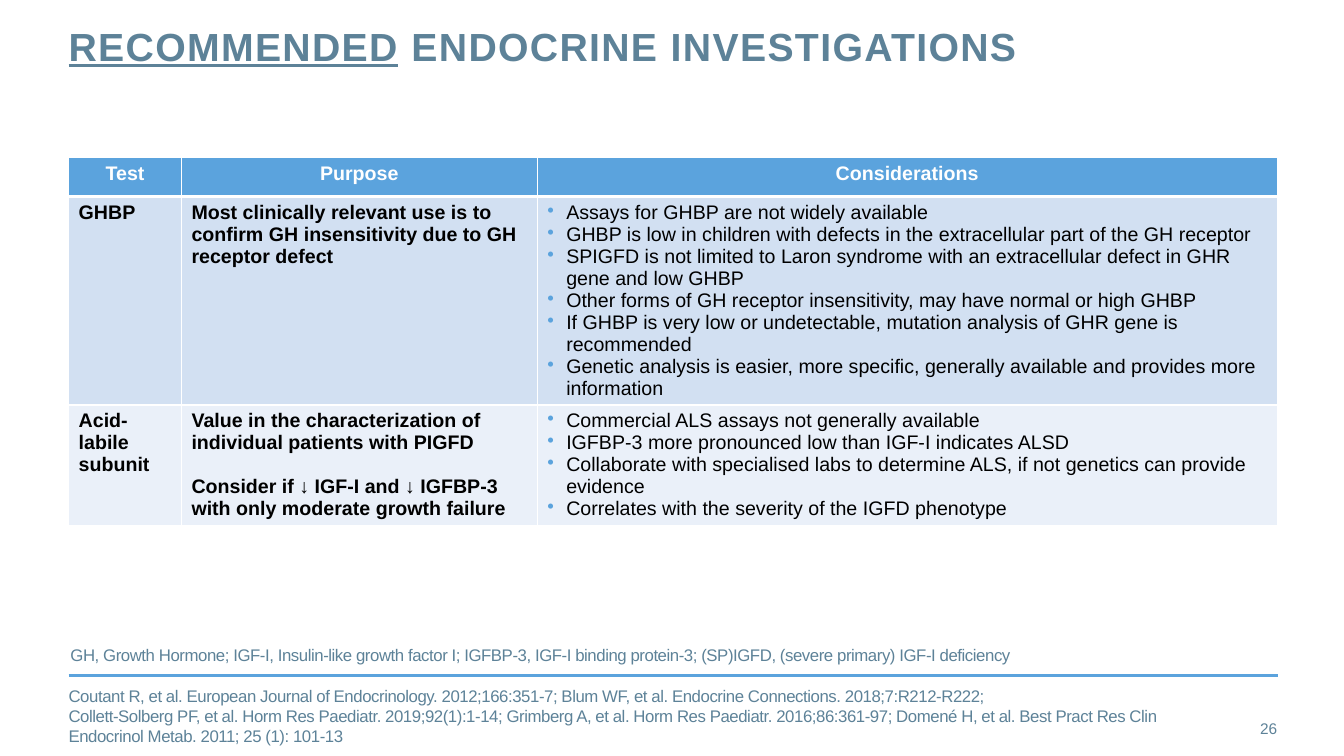
import pptx
import pptx.util
import pptx.dml.color
import pptx.enum.text
import pptx.enum.shapes
import pptx.oxml
import pptx.oxml.ns

Pt = pptx.util.Pt
ALIGN = pptx.enum.text.PP_ALIGN
ANCHOR = pptx.enum.text.MSO_ANCHOR

THEME = {
    "font": "Arial", "slate": "5D8298", "blue": "5BA3DD", "white": "FFFFFF",
    "black": "000000", "bands": ["D2E0F2", "EAF0F9"],
    "title": 28, "cell": 14, "note": 12, "page": 11,
}

TITLE = [("RECOMMENDED", True), (" ENDOCRINE INVESTIGATIONS", False)]
HEADS = ["Test", "Purpose", "Considerations"]
TESTS = [
    (["GHBP"],
     ["Most clinically relevant use is to confirm GH insensitivity due to GH receptor defect"],
     ["Assays for GHBP are not widely available",
      "GHBP is low in children with defects in the extracellular part of the GH receptor",
      "SPIGFD is not limited to Laron syndrome with an extracellular defect in GHR gene and low GHBP",
      "Other forms of GH receptor insensitivity, may have normal or high GHBP",
      "If GHBP is very low or undetectable, mutation analysis of GHR gene is recommended",
      "Genetic analysis is easier, more specific, generally available and provides more information"]),
    (["Acid-labile subunit"],
     ["Value in the characterization of individual patients with PIGFD",
      "Consider if ↓ IGF-I and ↓ IGFBP-3 with only moderate growth failure"],
     ["Commercial ALS assays not generally available",
      "IGFBP-3 more pronounced low than IGF-I indicates ALSD",
      "Collaborate with specialised labs to determine ALS, if not genetics can provide evidence",
      "Correlates with the severity of the IGFD phenotype"]),
]
TERMS = ("GH, Growth Hormone; IGF-I, Insulin-like growth factor I; IGFBP-3, IGF-I binding "
         "protein-3; (SP)IGFD, (severe primary) IGF-I deficiency")
REFS = ("Coutant R, et al. European Journal of Endocrinology. 2012;166:351-7; "
        "Blum WF, et al. Endocrine Connections. 2018;7:R212-R222;\n"
        "Collett-Solberg PF, et al. Horm Res Paediatr. 2019;92(1):1-14; "
        "Grimberg A, et al. Horm Res Paediatr. 2016;86:361-97; "
        "Domené H, et al. Best Pract Res Clin Endocrinol Metab. 2011; 25 (1): 101-13")
PAGE = "26"

LEFT, RULE = 49, 482.4
WIDE = 864
COLS = [80.6, 254.2, 528.5]
ROWS = [28.1, 148.5, 85.7]
GAP = 15.8


def tint(name):
    return pptx.dml.color.RGBColor.from_string(name)


def add_mark(para):
    props = para._p.get_or_add_pPr()
    props.set("marL", str(Pt(13.5)))
    props.set("indent", str(-Pt(13.5)))
    space = pptx.oxml.ns.nsdecls("a")
    for xml in (f'<a:buClr {space}><a:srgbClr val="{THEME["blue"]}"/></a:buClr>',
                f'<a:buChar {space} char="•"/>'):
        props.append(pptx.oxml.parse_xml(xml))


def write(frame, paras, size, color, bold=False, align=None, spread=0,
          mark=False, gap=0, lead=None):
    for num, runs in enumerate(paras):
        para = frame.paragraphs[0] if num == 0 else frame.add_paragraph()
        if mark:
            add_mark(para)
        if align is not None:
            para.alignment = align
        if num and gap:
            para.space_before = Pt(gap)
        if lead:
            para.line_spacing = Pt(lead)
        for text, under in ([(runs, False)] if isinstance(runs, str) else runs):
            for order, line in enumerate(text.split("\n")):
                if order:
                    para.add_line_break()
                run = para.add_run()
                run.text = line
                font = run.font
                font.name, font.size, font.bold = THEME["font"], Pt(size), bold
                font.underline = under
                font.color.rgb = tint(color)
                if spread:
                    run._r.get_or_add_rPr().set("spc", str(round(spread * 100)))


def add_box(slide, left, top, width, height, paras, inset=(0, 0), anchor=ANCHOR.TOP, **form):
    box = slide.shapes.add_textbox(Pt(left), Pt(top), Pt(width), Pt(height))
    frame = box.text_frame
    frame.word_wrap = True
    frame.vertical_anchor = anchor
    frame.margin_left = frame.margin_right = Pt(inset[0])
    frame.margin_top = frame.margin_bottom = Pt(inset[1])
    write(frame, paras, **form)


def style_cell(cell, fill, top, base):
    props = cell._tc.get_or_add_tcPr()
    for side, width in (("L", 1), ("R", 1), ("T", top), ("B", base)):
        props.append(pptx.oxml.parse_xml(
            f'<a:ln{side} {pptx.oxml.ns.nsdecls("a")} w="{Pt(width)}"><a:solidFill>'
            f'<a:srgbClr val="{THEME["white"]}"/></a:solidFill></a:ln{side}>'))
    cell.fill.solid()
    cell.fill.fore_color.rgb = tint(fill)


def add_tests(slide):
    table = slide.shapes.add_table(
        len(ROWS), len(COLS), Pt(LEFT), Pt(112.3), Pt(sum(COLS)), Pt(sum(ROWS))).table
    for col, width in zip(table.columns, COLS):
        col.width = Pt(width)
    for row, height in zip(table.rows, ROWS):
        row.height = Pt(height)
    for col, head in enumerate(HEADS):
        cell = table.cell(0, col)
        style_cell(cell, THEME["blue"], 1, 3)
        write(cell.text_frame, [head], THEME["cell"], THEME["white"],
              bold=True, align=ALIGN.CENTER)
    for row, (test, fill) in enumerate(zip(TESTS, THEME["bands"]), 1):
        for col, paras in enumerate(test):
            cell = table.cell(row, col)
            style_cell(cell, fill, 3 if row == 1 else 1, 1)
            last = col == len(HEADS) - 1
            write(cell.text_frame, paras, THEME["cell"], THEME["black"],
                  bold=not last, mark=last, gap=0 if last else GAP)


def add_rule(slide):
    rule = slide.shapes.add_connector(
        pptx.enum.shapes.MSO_CONNECTOR.STRAIGHT, Pt(LEFT), Pt(RULE), Pt(LEFT + WIDE), Pt(RULE))
    rule.line.color.rgb = tint(THEME["blue"])
    rule.line.width = Pt(2)
    rule._element.spPr.append(
        pptx.oxml.parse_xml(f'<a:effectLst {pptx.oxml.ns.nsdecls("a")}/>'))


def main():
    deck = pptx.Presentation()
    deck.slide_width, deck.slide_height = Pt(960), Pt(540)
    slide = deck.slides.add_slide(deck.slide_layouts[6])
    slate = THEME["slate"]
    note = {"size": THEME["note"], "color": slate, "spread": -0.3}
    add_rule(slide)
    add_tests(slide)
    add_box(slide, LEFT, 19.4, 688.3, 63.4, [TITLE], size=THEME["title"],
            color=slate, bold=True, spread=1, lead=30)
    add_box(slide, 850.3, 506.2, 62, 28.8, [PAGE], anchor=ANCHOR.MIDDLE,
            size=THEME["page"], color=slate, align=ALIGN.RIGHT)
    add_box(slide, LEFT, 496.8, 801.3, 28.8, [REFS], anchor=ANCHOR.MIDDLE, **note)
    add_box(slide, 43.2, 457.2, 863.3, 21.6, [TERMS], inset=(7.2, 3.6), **note)
    deck.save("out.pptx")


if __name__ == "__main__":
    main()
